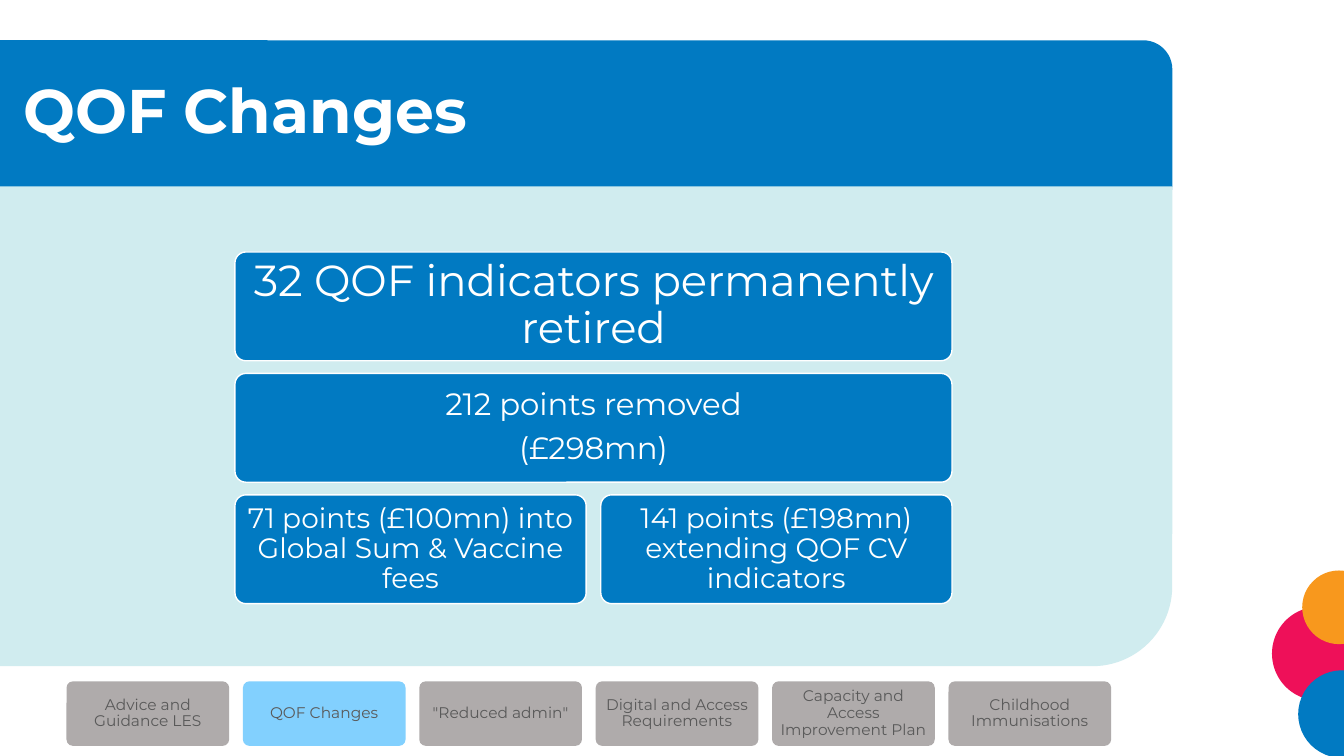
from pptx import Presentation
from pptx.dml.color import RGBColor
from pptx.enum.shapes import MSO_SHAPE
from pptx.enum.text import MSO_ANCHOR, PP_ALIGN
from pptx.util import Pt

ROUNDED = MSO_SHAPE.ROUNDED_RECTANGLE
ONE_ROUNDED = MSO_SHAPE.ROUND_1_RECTANGLE
OVAL = MSO_SHAPE.OVAL
MIDDLE = MSO_ANCHOR.MIDDLE
CENTER = PP_ALIGN.CENTER
LEFT = PP_ALIGN.LEFT

FONT = "Montserrat"
COLORS = {
    "blue": "017AC2",
    "pale": "D0ECEF",
    "pink": "EE1059",
    "orange": "F8981D",
    "white": "FFFFFF",
    "gray": "AFABAB",
    "sky": "82D0FE",
    "ink": "595959",
}
CARD_ROWS = [
    (["32 QOF indicators permanently retired"], 31, 9.3),
    (["212 points removed\n(£298mn)"], 22, 6.6),
    (["71 points (£100mn) into Global Sum & Vaccine fees",
      "141 points (£198mn) extending QOF CV indicators"], 20, 6),
]
TABS = [
    "Advice and Guidance LES",
    "QOF Changes",
    "\"Reduced admin\"",
    "Digital and Access Requirements",
    "Capacity and Access Improvement Plan",
    "Childhood Immunisations",
]
ACTIVE_TAB = "QOF Changes"


def color(name):
    return RGBColor.from_string(COLORS[name])


def add_block(page, kind, box, fill, line=None):
    block = page.shapes.add_shape(kind, *[Pt(length) for length in box])
    block.shadow.inherit = False
    block.fill.solid()
    block.fill.fore_color.rgb = color(fill)
    if line:
        block.line.color.rgb = color(line)
        block.line.width = Pt(1)
    else:
        block.line.fill.background()
    return block


def write_text(shape, text, size, ink, align=CENTER, bold=False, after=0):
    frame = shape.text_frame
    frame.text = text
    frame.word_wrap = True
    frame.vertical_anchor = MIDDLE
    for para in frame.paragraphs:
        para.alignment = align
        para.line_spacing = 0.9
        para.space_after = Pt(after)
        for span in para.runs:
            span.font.name = FONT
            span.font.size = Pt(size)
            span.font.bold = bold
            span.font.color.rgb = color(ink)


def add_card(page, box, text, size, inset, fill, ink, line=None):
    card = add_block(page, ROUNDED, box, fill, line)
    card.adjustments[0] = 0.1
    frame = card.text_frame
    frame.margin_left = frame.margin_right = Pt(inset)
    frame.margin_top = frame.margin_bottom = Pt(inset)
    write_text(card, text, size, ink, after=round(0.35 * size, 2))


def add_backdrop(page, box):
    left, top, width, height = box
    bar_height = 104.4
    add_block(page, ROUNDED, (left - 28.8, top, width + 28.8, 124.6), "blue")
    panel_box = (left - 7.9, top + bar_height, width + 7.9, height - bar_height)
    panel = add_block(page, ONE_ROUNDED, panel_box, "pale")
    panel._element.spPr.xfrm.set("flipV", "1")
    title = page.shapes.add_textbox(
        Pt(left + 9.4), Pt(top), Pt(width - 9.4), Pt(bar_height))
    write_text(title, "QOF Changes", 44, "white", LEFT, True)


def add_bubbles(page, box):
    left, top = box
    bubbles = [(0, 25.9, 67, "pink"), (18.7, 71.3, 62.6, "blue"),
               (21.6, 0, 52.6, "orange")]
    for across, down, size, fill in bubbles:
        add_block(page, OVAL, (left + across, top + down, size, size), fill)


def add_cards(page, box):
    left, top, width, height = box
    row_gap, column_gap = 9, 10.4
    row_height = (height - row_gap * (len(CARD_ROWS) - 1)) / len(CARD_ROWS)
    for row, (texts, size, inset) in enumerate(CARD_ROWS):
        card_width = (width - column_gap * (len(texts) - 1)) / len(texts)
        for column, text in enumerate(texts):
            card_box = (left + column * (card_width + column_gap),
                        top + row * (row_height + row_gap),
                        card_width, row_height)
            add_card(page, card_box, text, size, inset, "blue", "white", "white")


def add_tabs(page, box):
    left, top, width, height = box
    gap = 9.8
    tab_width = (width - gap * (len(TABS) - 1)) / len(TABS)
    for index, text in enumerate(TABS):
        tab_box = (left + index * (tab_width + gap), top, tab_width, height)
        fill = "sky" if text == ACTIVE_TAB else "gray"
        add_card(page, tab_box, text, 11, 3.3, fill, "ink")


def main():
    deck = Presentation()
    deck.slide_width, deck.slide_height = Pt(960), Pt(540)
    page = deck.slides.add_slide(deck.slide_layouts[6])
    add_backdrop(page, (0, 28.8, 837.4, 447.1))
    add_bubbles(page, (908.6, 407.5))
    add_cards(page, (167.8, 180, 512.2, 251.2))
    add_tabs(page, (47.5, 486.7, 746.2, 46.1))
    deck.save("out.pptx")


if __name__ == "__main__":
    main()
